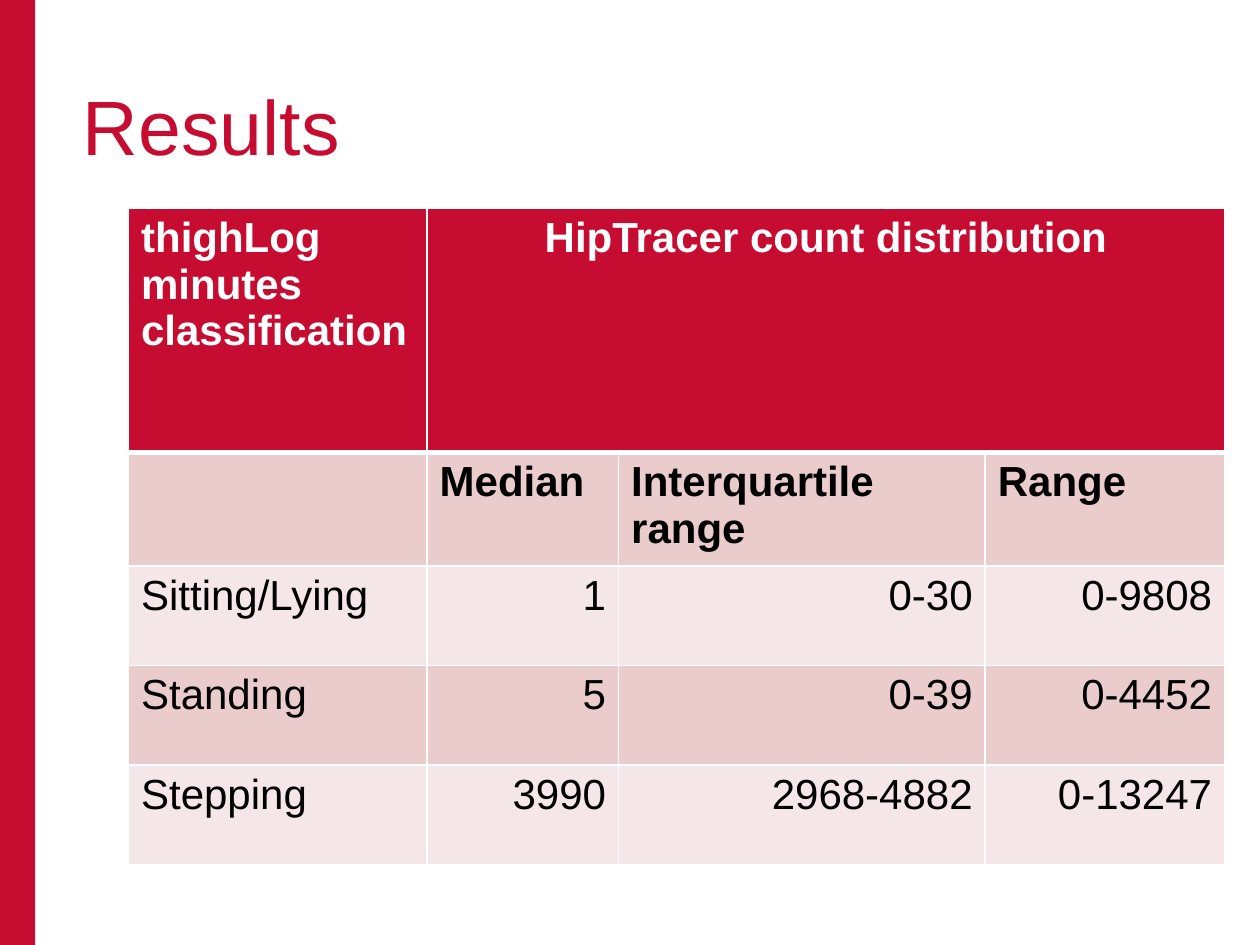
import pptx
import pptx.dml.color
import pptx.enum.shapes
import pptx.enum.text
import pptx.oxml
import pptx.oxml.ns
import pptx.util
from pptx.util import Inches

RED, WHITE, BLACK = "C60C30", "FFFFFF", "000000"
DARK_BAND, LIGHT_BAND = "EACCCD", "F5E7E8"
ALIGN = pptx.enum.text.PP_ALIGN


def color(value):
    return pptx.dml.color.RGBColor.from_string(value)


def write(text_frame, text, font_color, alignment=ALIGN.LEFT, **font_format):
    """Fill a text frame, one paragraph per line of text."""
    text_frame.word_wrap = True
    text_frame.text = text
    for paragraph in text_frame.paragraphs:
        paragraph.alignment = alignment
        for run in paragraph.runs:
            run.font.color.rgb = color(font_color)
            for name, value in {"name": "Arial", **font_format}.items():
                setattr(run.font, name, value)


presentation = pptx.Presentation()
presentation.slide_width, presentation.slide_height = Inches(10), Inches(7.5)
slide = presentation.slides.add_slide(presentation.slide_layouts[6])

# Red side bar
side_bar = slide.shapes.add_shape(
    pptx.enum.shapes.MSO_SHAPE.RECTANGLE, 0, 0, Inches(0.28), Inches(7.5))
side_bar.shadow.inherit = False
side_bar.fill.solid()
side_bar.fill.fore_color.rgb = color(RED)
side_bar.line.fill.background()

# Title
title = slide.shapes.add_textbox(Inches(0.56), Inches(0.51), Inches(8.94), Inches(1.29))
title.text_frame.margin_top = Inches(0.11)
write(title.text_frame, "Results", RED, size=pptx.util.Pt(44))

# Table grid
rows = [
    ["thighLog\nminutes classification", "HipTracer count distribution", "", ""],
    ["", "Median", "Interquartile range", "Range"],
    ["Sitting/Lying", "1", "0-30", "0-9808"],
    ["Standing", "5", "0-39", "0-4452"],
    ["Stepping", "3990", "2968-4882", "0-13247"],
]
column_widths = [2.37, 1.52, 2.91, 1.9]
row_heights = [1.94] + [0.79] * 4
table = slide.shapes.add_table(
    len(rows), len(column_widths), Inches(1.02), Inches(1.65),
    Inches(sum(column_widths)), Inches(sum(row_heights))).table
for column, width in zip(table.columns, column_widths):
    column.width = Inches(width)
for row, height in zip(table.rows, row_heights):
    row.height = Inches(height)
table.cell(0, 1).merge(table.cell(0, 3))

# Cell text, borders and fills
for row_index, row in enumerate(rows):
    is_header = row_index == 0
    band = RED if is_header else DARK_BAND if row_index % 2 else LIGHT_BAND
    for column_index, text in enumerate(row):
        cell = table.cell(row_index, column_index)
        alignment = ALIGN.LEFT
        if column_index and is_header:
            alignment = ALIGN.CENTER
        elif column_index and row_index > 1:
            alignment = ALIGN.RIGHT
        write(cell.text_frame, text, WHITE if is_header else BLACK, alignment,
              size=pptx.util.Pt(24), bold=row_index < 2)

        # The rule below the header is thicker than the others
        thick_side = {0: "B", 1: "T"}.get(row_index)
        properties = cell._tc.get_or_add_tcPr()
        for side in "LRTB":
            width = pptx.util.Pt(3 if side == thick_side else 1)
            properties.append(pptx.oxml.parse_xml(
                f'<a:ln{side} {pptx.oxml.ns.nsdecls("a")} w="{width}"><a:solidFill>'
                f'<a:srgbClr val="{WHITE}"/></a:solidFill></a:ln{side}>'))
        cell.fill.solid()
        cell.fill.fore_color.rgb = color(band)

presentation.save("out.pptx")
